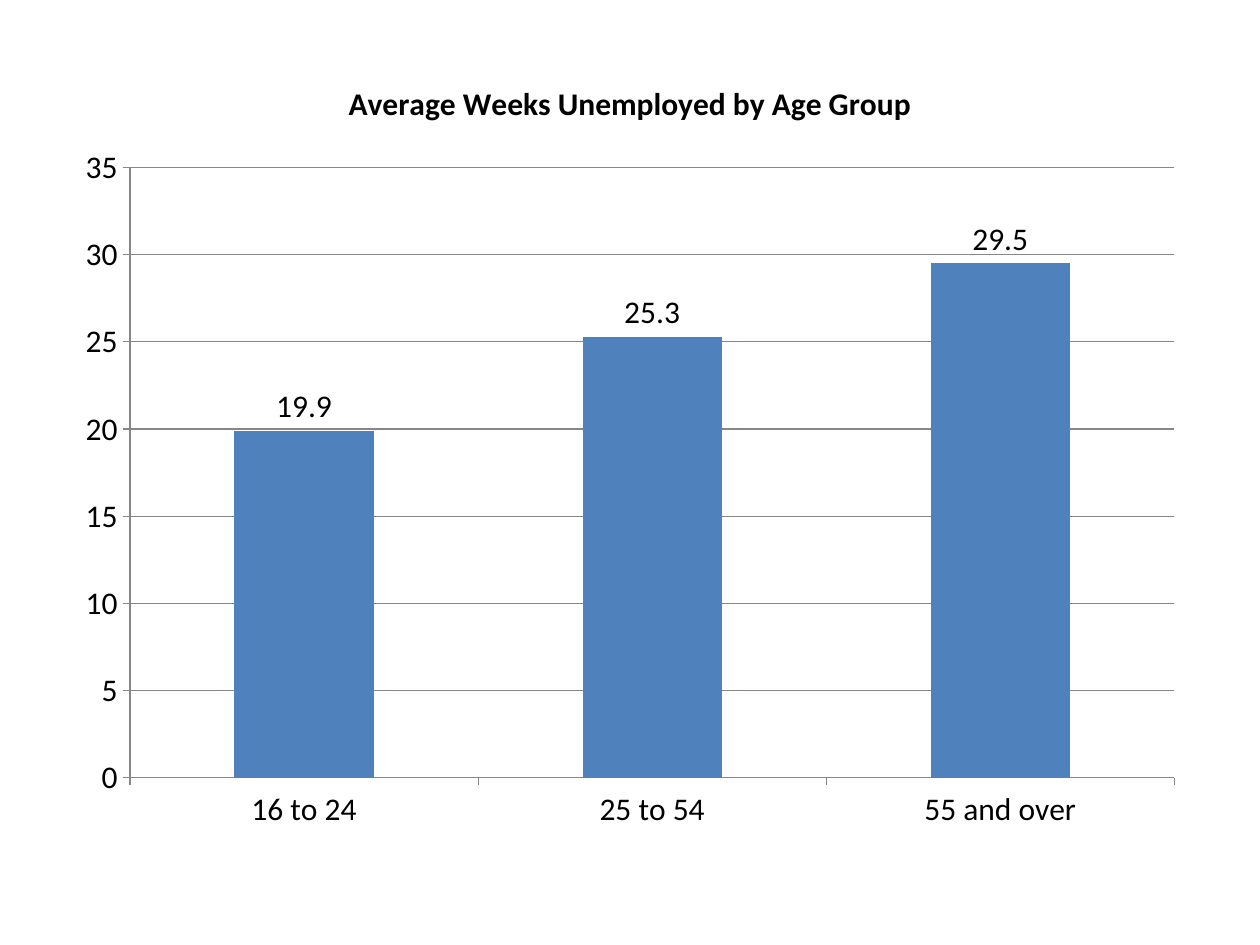
from pptx import Presentation
from pptx.chart.data import CategoryChartData
from pptx.dml.color import RGBColor
from pptx.enum.chart import XL_CHART_TYPE, XL_LABEL_POSITION, XL_TICK_MARK
from pptx.util import Inches, Pt

COLORS = {"bar": "4F81BD", "line": "878787", "text": "000000"}
WEEKS_BY_AGE = {"16 to 24": 19.9, "25 to 54": 25.3, "55 and over": 29.5}
TEXT = {"name": "Calibri", "size": Pt(18), "bold": False}
TITLE_TEXT = {**TEXT, "bold": True}


def set_attributes(target, values):
    """Set each named attribute of the target."""
    for name, value in values.items():
        setattr(target, name, value)


def format_font(font, values):
    """Give a font its values and the text colour."""
    set_attributes(font, values)
    font.color.rgb = RGBColor.from_string(COLORS["text"])


def format_line(line):
    """Give a line the grey of axes and gridlines."""
    line.color.rgb = RGBColor.from_string(COLORS["line"])
    line.width = Pt(0.75)


def format_title(chart, text):
    """Write the chart title."""
    chart.has_title = True
    frame = chart.chart_title.text_frame
    frame.text = text
    format_font(frame.paragraphs[0].runs[0].font, TITLE_TEXT)
    chart.chart_title.include_in_layout = False


def format_axis(axis, values):
    """Format the line, ticks and labels of an axis."""
    set_attributes(axis, {"major_tick_mark": XL_TICK_MARK.OUTSIDE,
                          "minor_tick_mark": XL_TICK_MARK.NONE, **values})
    format_line(axis.format.line)
    format_font(axis.tick_labels.font, TEXT)


def format_bars(plot):
    """Colour the bars and put their values above them."""
    set_attributes(plot, {"gap_width": 150, "vary_by_categories": False,
                          "has_data_labels": True})
    fill = plot.series[0].format.fill
    fill.solid()
    fill.fore_color.rgb = RGBColor.from_string(COLORS["bar"])
    set_attributes(plot.data_labels, {"show_value": True,
                                      "position": XL_LABEL_POSITION.OUTSIDE_END})
    format_font(plot.data_labels.font, TEXT)


def add_column_chart(page):
    """Add the chart of weeks unemployed."""
    data = CategoryChartData()
    data.categories = list(WEEKS_BY_AGE)
    data.add_series("Series 1", list(WEEKS_BY_AGE.values()))
    chart = page.shapes.add_chart(
        XL_CHART_TYPE.COLUMN_CLUSTERED,
        Inches(0.5), Inches(0.42), Inches(9), Inches(6.28), data).chart
    chart.has_legend = False
    format_font(chart.font, TEXT)
    format_title(chart, "Average Weeks Unemployed by Age Group")
    format_axis(chart.category_axis, {"has_major_gridlines": False})
    format_axis(chart.value_axis, {"has_major_gridlines": True, "minimum_scale": 0,
                                   "maximum_scale": 35, "major_unit": 5})
    format_line(chart.value_axis.major_gridlines.format.line)
    format_bars(chart.plots[0])


def main():
    """Build and save the deck."""
    deck = Presentation()
    set_attributes(deck, {"slide_width": Inches(10), "slide_height": Inches(7.5)})
    add_column_chart(deck.slides.add_slide(deck.slide_layouts[6]))
    deck.save("out.pptx")


if __name__ == "__main__":
    main()
